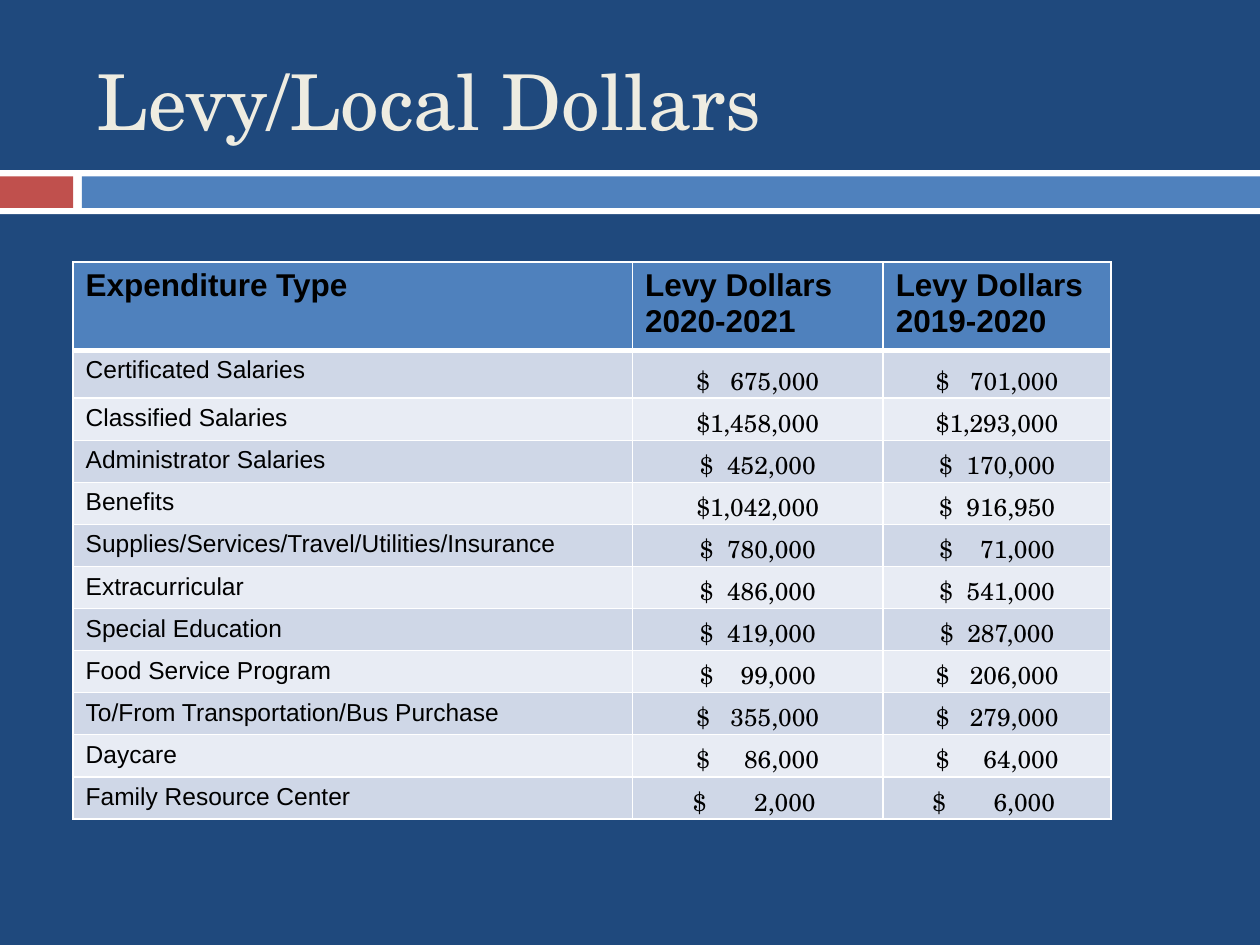
from lxml.etree import SubElement
from pptx import Presentation
from pptx.dml.color import RGBColor
from pptx.enum.shapes import MSO_SHAPE
from pptx.enum.text import MSO_ANCHOR, PP_ALIGN
from pptx.oxml.ns import qn
from pptx.util import Inches, Pt

COLORS = {
    "back": "1F497D", "white": "FFFFFF", "red": "C0504D", "blue": "4F81BD",
    "cream": "EEECE1", "black": "000000", "dark": "CFD7E7", "light": "E8ECF4",
}
SANS, SERIF = "Arial", "TeX Gyre Schola"
COLS = [4.44, 1.99, 1.81]
HEAD = ["Expenditure Type", "Levy Dollars\n2020-2021", "Levy Dollars\n2019-2020"]
ROWS = [
    ("Certificated Salaries", "$   675,000", "$   701,000"),
    ("Classified Salaries", "$1,458,000", "$1,293,000"),
    ("Administrator Salaries", "$  452,000", "$  170,000"),
    ("Benefits", "$1,042,000", "$  916,950"),
    ("Supplies/Services/Travel/Utilities/Insurance", "$  780,000", "$    71,000"),
    ("Extracurricular", "$  486,000", "$  541,000"),
    ("Special Education", "$  419,000", "$  287,000"),
    ("Food Service Program", "$    99,000", "$   206,000"),
    ("To/From Transportation/Bus Purchase", "$   355,000", "$   279,000"),
    ("Daycare", "$     86,000", "$     64,000"),
    ("Family Resource Center", "$       2,000 ", "$       6,000 "),
]
TIGHT = 5  # the first rows hold their amounts at the cell bottom


def rgb(name):
    return RGBColor.from_string(COLORS[name])


def add_bar(slide, left, top, width, height, color):
    bar = slide.shapes.add_shape(
        MSO_SHAPE.RECTANGLE, Inches(left), Inches(top), Inches(width), Inches(height))
    bar.shadow.inherit = False
    bar.fill.solid()
    bar.fill.fore_color.rgb = rgb(color)
    bar.line.fill.background()


def add_text(frame, text, font, size, color, bold=False, align=PP_ALIGN.LEFT):
    """Write each line of text as a paragraph."""
    for i, line in enumerate(text.split("\n")):
        para = frame.add_paragraph() if i else frame.paragraphs[0]
        para.alignment = align
        run = para.add_run()
        run.text = line
        run.font.name = font
        run.font.size = Pt(size)
        run.font.bold = bold
        run.font.color.rgb = rgb(color)


def add_title(slide, text):
    box = slide.shapes.add_textbox(Inches(0.67), Inches(0.25), Inches(8.92), Inches(1.08))
    frame = box.text_frame
    frame.word_wrap = True
    frame.vertical_anchor = MSO_ANCHOR.MIDDLE
    add_text(frame, text, SERIF, 44, "cream")


def style_cell(cell, color, top=1, base=1):
    """Set white borders, then the fill, in schema order."""
    props = cell._tc.get_or_add_tcPr()
    for side, width in zip("LRTB", (1, 1, top, base)):
        line = SubElement(props, qn(f"a:ln{side}"), w=str(Pt(width)))
        fill = SubElement(line, qn("a:solidFill"))
        SubElement(fill, qn("a:srgbClr"), val=COLORS["white"])
    cell.fill.solid()
    cell.fill.fore_color.rgb = rgb(color)


def set_tight(cell):
    cell.vertical_anchor = MSO_ANCHOR.BOTTOM
    cell.margin_left = cell.margin_right = cell.margin_top = Inches(0.01)
    cell.margin_bottom = 0


def add_grid(slide):
    heights = [0.6, 0.38] + [0.33] * (len(ROWS) - 1)
    table = slide.shapes.add_table(
        len(heights), len(COLS), Inches(0.58), Inches(2.08),
        Inches(sum(COLS)), Inches(sum(heights))).table
    table.horz_banding = False
    for col, width in zip(table.columns, COLS):
        col.width = Inches(width)
    for row, height in zip(table.rows, heights):
        row.height = Inches(height)
    for c, text in enumerate(HEAD):
        cell = table.cell(0, c)
        style_cell(cell, "blue", base=3)
        add_text(cell.text_frame, text, SANS, 18, "black", bold=True)
    for r, row in enumerate(ROWS, 1):
        for c, text in enumerate(row):
            cell = table.cell(r, c)
            style_cell(cell, "dark" if r % 2 else "light", top=3 if r == 1 else 1)
            if c and r <= TIGHT:
                set_tight(cell)
            add_text(cell.text_frame, text, SERIF if c else SANS, 14, "black",
                     align=PP_ALIGN.CENTER if c else PP_ALIGN.LEFT)


def main():
    deck = Presentation()
    deck.slide_width, deck.slide_height = Inches(10), Inches(7.5)
    slide = deck.slides.add_slide(deck.slide_layouts[6])
    slide.background.fill.solid()
    slide.background.fill.fore_color.rgb = rgb("back")
    add_bar(slide, 0, 1.35, 10, 0.35, "white")
    add_bar(slide, 0, 1.4, 0.58, 0.25, "red")
    add_bar(slide, 0.65, 1.4, 9.35, 0.25, "blue")
    add_title(slide, "Levy/Local Dollars")
    add_grid(slide)
    deck.save("out.pptx")


if __name__ == "__main__":
    main()
